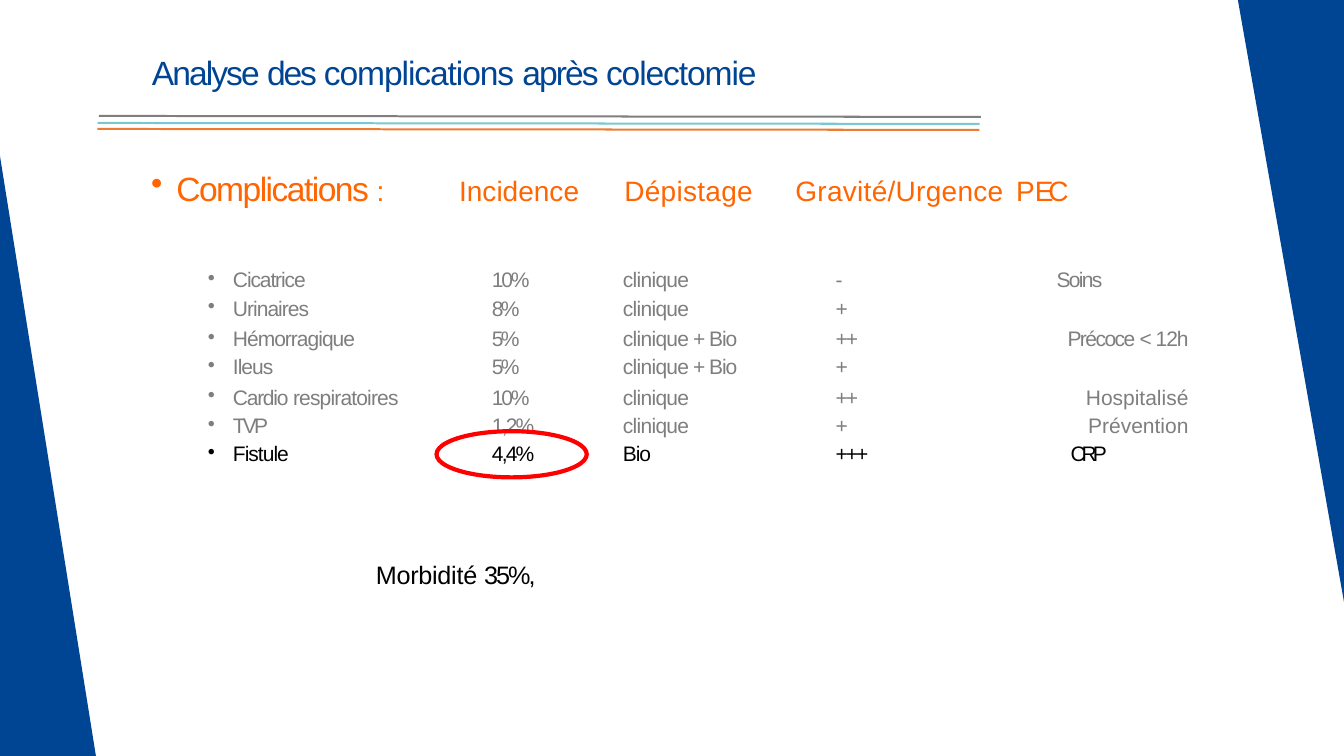
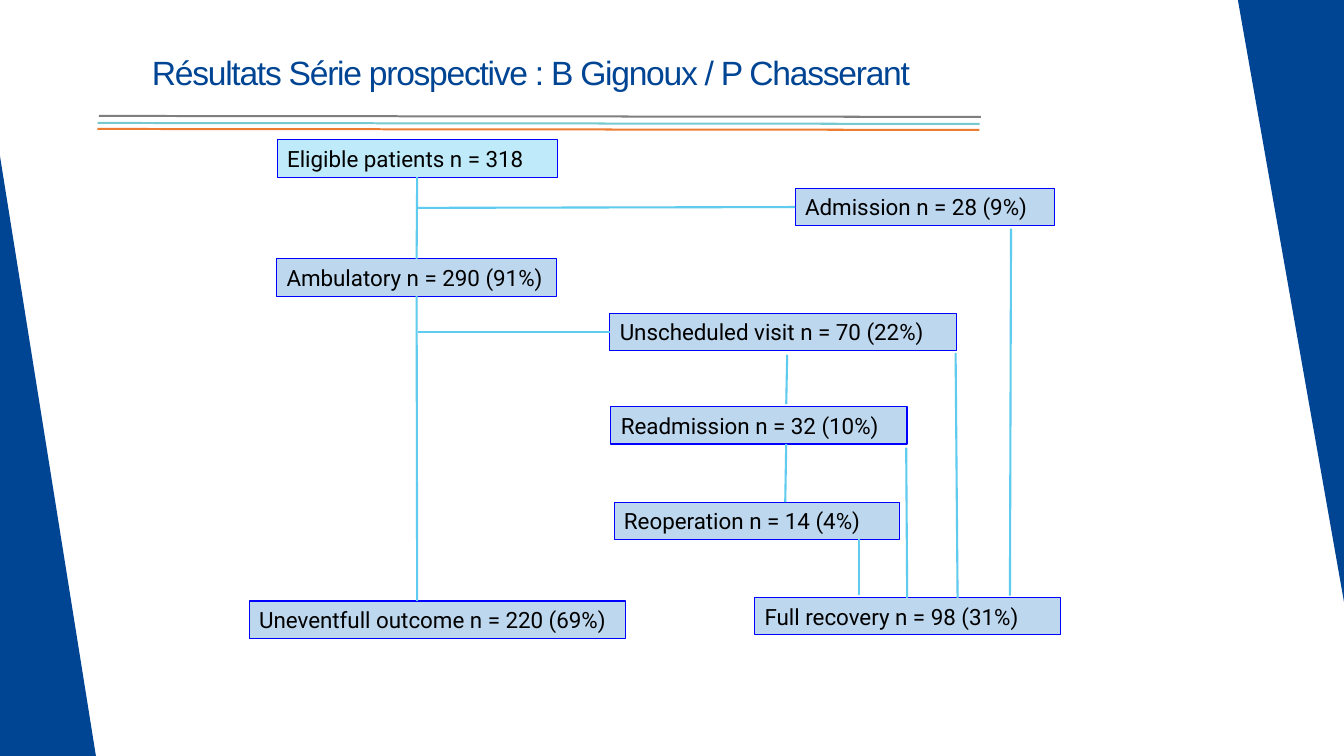
from dataclasses import dataclass
from typing import Optional

from lxml import etree
from pptx import Presentation
from pptx.dml.color import RGBColor
from pptx.enum import shapes, text
from pptx.oxml import ns
from pptx.util import Pt

NAVY = RGBColor(0x00, 0x44, 0x94)
ORANGE = RGBColor(0xFF, 0x65, 0x00)
GREY = RGBColor(0x7E, 0x7E, 0x7E)
BLACK = RGBColor(0x00, 0x00, 0x00)
RED = RGBColor(0xFF, 0x00, 0x00)
BLUE = RGBColor(0x00, 0x00, 0xFF)
ICE = RGBColor(0xBF, 0xEA, 0xF9)
PALE = RGBColor(0xBD, 0xD7, 0xEE)
SKY = RGBColor(0x5F, 0xCB, 0xEF)
RULE_GREY = RGBColor(0x7F, 0x7F, 0x7F)
RULE_TEAL = RGBColor(0x75, 0xC9, 0xCF)
RULE_ORANGE = RGBColor(0xED, 0x7C, 0x30)

SLIDE_W, SLIDE_H = 960, 540
BOX_H = 26.6
TOP, LEFT, BOTTOM = 0, 1, 2
ALIGN = text.PP_ALIGN


@dataclass(frozen=True)
class Span:
    words: str
    spacing: float = 0
    size: float = 20


@dataclass(frozen=True)
class Rule:
    x: float
    y: float
    color: RGBColor


@dataclass(frozen=True)
class Heading:
    x: float
    y: float
    w: float
    h: float
    spans: tuple[Span, ...]
    bullet: bool = False
    tab: Optional[float] = None


@dataclass(frozen=True)
class Column:
    width: float
    indent: float


@dataclass(frozen=True)
class Box:
    name: str
    x: float
    y: float
    w: float
    label: str
    fill: RGBColor = PALE


@dataclass(frozen=True)
class Link:
    x1: float
    y1: float
    x2: float
    y2: float
    begin: Optional[tuple[str, int]] = None
    end: Optional[tuple[str, int]] = None


RULES = (
    Rule(69.8, 87.1, RULE_TEAL),
    Rule(69.5, 91.4, RULE_ORANGE),
    Rule(70.6, 82.1, RULE_GREY),
)

HEADINGS = (
    Heading(107.3, 118.8, 191.5, 30, (Span("Complications ", -1.1, 24), Span(":", -0.2)), bullet=True),
    Heading(328, 122.6, 91.5, 25, (Span("Incidence"),)),
    Heading(446, 122.6, 94.5, 25, (Span("Dépistage", 0.2),)),
    Heading(568.2, 122.6, 216, 25,
            (Span("Gravité/Urgence\t", 0.2), Span("P"), Span("EC", -3.8)), tab=157.7),
)

COLUMNS = (Column(187.9, 20.2), Column(85, 17.3), Column(154.8, 25.9), Column(110.2, 23), Column(164.9, 0))


def cell(words: str, spacing: float = 0) -> tuple[Span, ...]:
    return (Span(words, spacing, 15),)


CLINICAL = cell("clinique", -0.5)
CLINICAL_BIO = CLINICAL + cell(" + ", -1.4) + cell("Bio", -0.8)
EMPTY: tuple[Span, ...] = ()

ROWS = (
    (cell("Cicatrice", -0.8), cell("10%", -1.6), CLINICAL, cell("-"), cell("Soins", -1.2)),
    (cell("Urinaires", -0.7), cell("8%", -1.9), CLINICAL, cell("+"), EMPTY),
    (cell("Hémorragique", -0.7), cell("5%", -1.9), CLINICAL_BIO, cell("++", -1.4),
     cell("Précoce ", -1.1) + cell("< ", -1.4) + cell("12h", -0.8)),
    (cell("Ileus", -0.7), cell("5%", -1.9), CLINICAL_BIO, cell("+"), EMPTY),
    (cell("Cardio ", -0.9) + cell("respiratoires", -0.6), cell("10%", -1.6), CLINICAL,
     cell("++", -1.4), cell("Hospitalisé")),
    (cell("TVP", -2), cell("1,2%", -1.3), CLINICAL, cell("+"), cell("Prévention")),
    (cell("Fistule", -0.7), cell("4,4%", -1.3), cell("Bio", -0.8), cell("+++", -1.4), cell("CRP", -2.9)),
)

ACTION_LAYOUT = {0: (ALIGN.LEFT, 70.6), len(ROWS) - 1: (ALIGN.CENTER, 22.3)}

BOXES = (
    Box("eligible", 198, 100, 200, "Eligible patients n = 318", ICE),
    Box("admission", 568, 134.6, 185, "Admission n = 28 (9%)"),
    Box("ambulatory", 197.6, 185, 200, "Ambulatory n = 290 (91%)"),
    Box("visit", 435.6, 223.9, 247.5, "Unscheduled visit n = 70 (22%)"),
    Box("readmission", 436.4, 290.6, 211.5, "Readmission n = 32 (10%)"),
    Box("reoperation", 438.6, 358.6, 204, "Reoperation n = 14 (4%)"),
    Box("uneventful", 178, 429.3, 268.6, "Uneventfull outcome n = 220 (69%)"),
    Box("recovery", 539, 427, 218.3, "Full recovery n = 98 (31%)"),
)

LINKS = (
    Link(297.6, 211.6, 298, 429.3, begin=("ambulatory", BOTTOM)),
    Link(298.5, 148.5, 568, 147.9, end=("admission", LEFT)),
    Link(722.2, 163.4, 721.4, 425.5),
    Link(298.5, 237.2, 435.6, 237.2, end=("visit", LEFT)),
    Link(562.3, 253.4, 561.6, 288.7),
    Link(561.6, 317.2, 560.9, 358.6),
    Link(682.6, 252, 684, 427),
    Link(647.3, 319.7, 648, 427),
    Link(613.4, 385.2, 613.4, 424.8),
    Link(298, 126.6, 297.6, 185, begin=("eligible", BOTTOM), end=("ambulatory", TOP)),
)


def add_spans(p, spans: tuple[Span, ...], color: RGBColor, font: str = "Arial") -> None:
    for span in spans:
        r = p.add_run()
        r.text = span.words
        r.font.size = Pt(span.size)
        r.font.name = font
        r.font.color.rgb = color
        if span.spacing:
            r._r.get_or_add_rPr().set("spc", str(round(span.spacing * 100)))


def indent(p, margin: float, bullet: bool = False) -> None:
    pPr = p._p.get_or_add_pPr()
    pPr.set("marL", str(Pt(margin)))
    if bullet:
        pPr.set("indent", str(-Pt(18)))
        etree.SubElement(pPr, ns.qn("a:buChar")).set("char", "•")


def add_tab(p, position: float) -> None:
    tabs = etree.SubElement(p._p.get_or_add_pPr(), ns.qn("a:tabLst"))
    tab = etree.SubElement(tabs, ns.qn("a:tab"))
    tab.set("pos", str(Pt(position)))
    tab.set("algn", "l")


def add_text(s, x: float, y: float, w: float, h: float, spans: tuple[Span, ...], color: RGBColor):
    tf = s.shapes.add_textbox(Pt(x), Pt(y), Pt(w), Pt(h)).text_frame
    tf.word_wrap = True
    tf.margin_left = tf.margin_right = tf.margin_bottom = 0
    tf.margin_top = Pt(1)
    p = tf.paragraphs[0]
    add_spans(p, spans, color)
    return p


def paint(sp, color: RGBColor) -> None:
    sp.shadow.inherit = False
    sp.fill.solid()
    sp.fill.fore_color.rgb = color
    sp.line.fill.background()


def add_corner(s, x: float, y: float, w: float, h: float, rotation: float) -> None:
    sp = s.shapes.add_shape(shapes.MSO_SHAPE.RIGHT_TRIANGLE, Pt(x), Pt(y), Pt(w), Pt(h))
    sp.rotation = rotation
    paint(sp, NAVY)


def add_rule(s, rule: Rule, length: float = 630, drop: float = 0.7, weight: float = 1.44) -> None:
    right, low = rule.x + length, rule.y + drop
    outline = s.shapes.build_freeform(Pt(rule.x), Pt(rule.y))
    outline.add_line_segments([(Pt(right), Pt(low)), (Pt(right), Pt(low + weight)),
                               (Pt(rule.x), Pt(rule.y + weight))])
    paint(outline.convert_to_shape(), rule.color)


def new_slide(prs, title: tuple[Span, ...]):
    s = prs.slides.add_slide(prs.slide_layouts[6])
    add_corner(s, 0, 111.6, 68.5, SLIDE_H - 111.6, 0)
    add_corner(s, SLIDE_W - 75.8, 0, 75.8, 430, 180)
    add_text(s, 108.5, 36, 640, 30, title, NAVY)
    for rule in RULES:
        add_rule(s, rule)
    return s


def add_complications(s) -> None:
    width = sum(column.width for column in COLUMNS)
    table = s.shapes.add_table(len(ROWS), len(COLUMNS), Pt(146.2), Pt(193), Pt(width), Pt(137)).table
    table.first_row = table.horz_banding = False
    for i, column in enumerate(COLUMNS):
        table.columns[i].width = Pt(column.width)
    last = len(ROWS) - 1
    for i, row in enumerate(ROWS):
        table.rows[i].height = Pt({0: 17.4, last: 18.4}.get(i, 20.3))
        for j, spans in enumerate(row):
            c = table.cell(i, j)
            c.fill.background()
            c.margin_left = c.margin_right = c.margin_top = c.margin_bottom = 0
            p = c.text_frame.paragraphs[0]
            p.line_spacing = Pt(18.5 if i else 15.6)
            margin = COLUMNS[j].indent
            if j == len(COLUMNS) - 1:
                p.alignment, margin = ACTION_LAYOUT.get(i, (ALIGN.RIGHT, 0))
            indent(p, margin, bullet=j == 0)
            add_spans(p, spans, BLACK if i == last else GREY)


def add_box(s, box: Box):
    sp = s.shapes.add_shape(shapes.MSO_SHAPE.RECTANGLE, Pt(box.x), Pt(box.y), Pt(box.w), Pt(BOX_H))
    paint(sp, box.fill)
    sp.line.color.rgb = BLUE
    sp.line.width = Pt(0.75)
    tf = sp.text_frame
    tf.vertical_anchor = text.MSO_ANCHOR.TOP
    p = tf.paragraphs[0]
    p.alignment = ALIGN.LEFT
    add_spans(p, (Span(box.label, size=16),), BLACK, "Roboto")
    return sp


def add_link(s, link: Link, boxes: dict) -> None:
    line = s.shapes.add_connector(shapes.MSO_CONNECTOR.STRAIGHT,
                                  Pt(link.x1), Pt(link.y1), Pt(link.x2), Pt(link.y2))
    line.line.color.rgb = SKY
    line.line.width = Pt(1.5)
    etree.SubElement(line._element.spPr, ns.qn("a:effectLst"))
    if link.begin:
        name, side = link.begin
        line.begin_connect(boxes[name], side)
    if link.end:
        name, side = link.end
        line.end_connect(boxes[name], side)


def complications_slide(prs) -> None:
    s = new_slide(prs, (Span("Analyse ", -1.4, 24), Span("des ", -1.6, 24), Span("complications ", -0.8, 24),
                        Span("après ", -1.4, 24), Span("colectomie", -0.8, 24)))
    for heading in HEADINGS:
        p = add_text(s, heading.x, heading.y, heading.w, heading.h, heading.spans, ORANGE)
        if heading.bullet:
            indent(p, 18.7, bullet=True)
        if heading.tab:
            add_tab(p, heading.tab)
    add_complications(s)
    ring = s.shapes.add_shape(shapes.MSO_SHAPE.OVAL, Pt(311.8), Pt(308), Pt(107.3), Pt(33))
    ring.shadow.inherit = False
    ring.fill.background()
    ring.line.color.rgb = RED
    ring.line.width = Pt(3)
    p = add_text(s, 268.5, 402.2, 383, 20, (Span("Morbidité ", -0.2, 18), Span("35%,", -1.4, 18)), BLACK)
    p.line_spacing = Pt(18.1)


def results_slide(prs) -> None:
    s = new_slide(prs, (Span("Résultats Série prospective : B Gignoux / P Chasserant", -0.9, 24),))
    boxes = {box.name: add_box(s, box) for box in BOXES}
    for link in LINKS:
        add_link(s, link, boxes)


def main() -> None:
    prs = Presentation()
    prs.slide_width, prs.slide_height = Pt(SLIDE_W), Pt(SLIDE_H)
    complications_slide(prs)
    results_slide(prs)
    prs.save("out.pptx")


if __name__ == "__main__":
    main()
